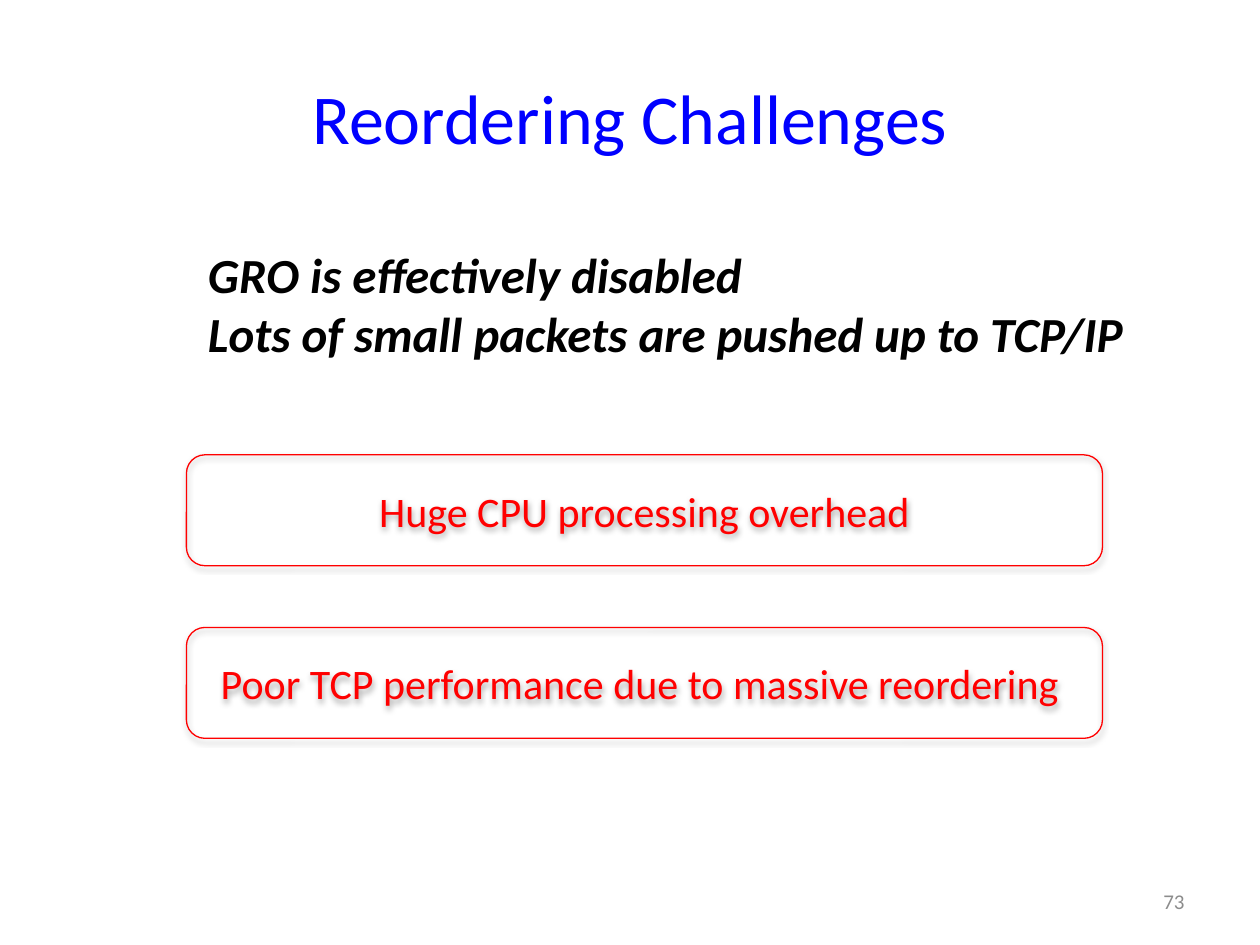
"""Build the Reordering Challenges slide."""
from lxml import etree
from pptx import Presentation, util as u
from pptx.dml.color import RGBColor
from pptx.enum import shapes, text
from pptx.oxml import parse_xml

COLORS = {"title": "0000FF", "body": "000000", "number": "8C8C8C", "problem": "FF0000"}
SHADOW = (
    '<a:effectLst xmlns:a="http://schemas.openxmlformats.org/drawingml/2006/main">'
    '<a:outerShdw blurRad="40000" dist="23000" dir="5400000" rotWithShape="0">'
    '<a:srgbClr val="000000"><a:alpha val="35000"/></a:srgbClr>'
    '</a:outerShdw></a:effectLst>'
)

prs = Presentation()
prs.slide_width, prs.slide_height = u.Inches(10), u.Inches(7.5)
s = prs.slides.add_slide(prs.slide_layouts[6])


def write(sp, lines, size, color, align, anchor, bold=False):
    tf = sp.text_frame
    tf.word_wrap = True
    tf.vertical_anchor = anchor
    tf.text = "\n".join(lines)
    for p in tf.paragraphs:
        p.alignment = align
        for r in p.runs:
            r.font.name, r.font.size = "Calibri", u.Pt(size)
            r.font.bold = r.font.italic = bold
            r.font.color.rgb = RGBColor.from_string(COLORS[color])


def box(left, top, width, height):
    return [u.Inches(v) for v in (left, top, width, height)]


center, middle = text.PP_ALIGN.CENTER, text.MSO_ANCHOR.MIDDLE

title = s.shapes.add_textbox(*box(0.5, 0.3, 9, 1.25))
write(title, ["Reordering Challenges"], 40, "title", center, middle)

causes = s.shapes.add_textbox(*box(1.05, 1.89, 8.13, 1.04))
causes.text_frame.margin_left = u.Inches(0.6)
write(causes, ["GRO is effectively disabled", "Lots of small packets are pushed up to TCP/IP"],
      28, "body", text.PP_ALIGN.LEFT, text.MSO_ANCHOR.TOP, bold=True)

number = s.shapes.add_textbox(*box(7.17, 6.95, 2.33, 0.4))
write(number, ["73"], 12, "number", text.PP_ALIGN.RIGHT, middle)

problems = ["Huge CPU processing overhead", "Poor TCP performance due to massive reordering "]
for row, problem in enumerate(problems):
    sp = s.shapes.add_shape(shapes.MSO_SHAPE.ROUNDED_RECTANGLE, *box(1.48, 3.61 + 1.37 * row, 7.27, 0.88))
    sp.fill.background()
    sp.line.color.rgb = RGBColor.from_string(COLORS["problem"])
    sp.line.width = u.Pt(0.75)
    sp._element.spPr.append(parse_xml(SHADOW))
    write(sp, [problem], 24, "problem", center, middle)

prs.save("out.pptx")
